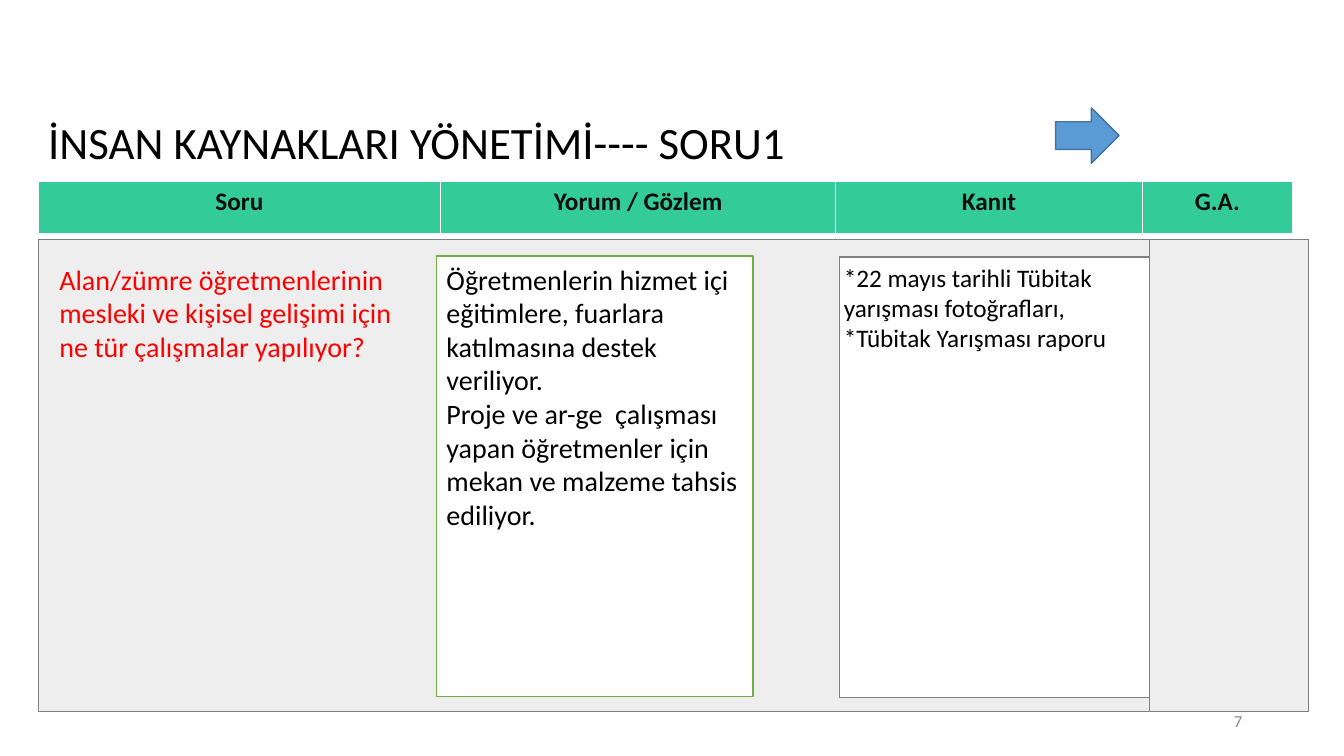
from lxml.etree import SubElement
from pptx import Presentation
from pptx.dml.color import RGBColor
from pptx.enum.shapes import MSO_SHAPE as Shape
from pptx.enum.text import MSO_ANCHOR as Anchor, PP_ALIGN as Align
from pptx.oxml.ns import qn
from pptx.util import Inches, Pt

GRAY_LINE = ("808080", 0.75)
GREEN_LINE = ("70AD47", 1)
BLUE_LINE = ("43739E", 1)
HEADINGS = {"Soru": 3.99, "Yorum / Gözlem": 3.92, "Kanıt": 3.04, "G.A.": 1.49}
BORDERS = {"a:lnL": 1, "a:lnR": 1, "a:lnT": 1, "a:lnB": 3}
QUESTION = ["Alan/zümre öğretmenlerinin mesleki ve kişisel gelişimi için "
            "ne tür çalışmalar yapılıyor?"]
OBSERVATIONS = [
    "Öğretmenlerin hizmet içi eğitimlere, fuarlara katılmasına destek veriliyor.",
    "Proje ve ar-ge  çalışması yapan öğretmenler için mekan ve malzeme tahsis ediliyor.",
]
EVIDENCE = ["*22 mayıs tarihli Tübitak yarışması fotoğrafları,",
            "*Tübitak Yarışması raporu"]


def color(value):
    """Turn a hex string into a colour."""
    return RGBColor.from_string(value)


def write(frame, lines, ink, size, align=Align.LEFT, bold=False, spacing=1.0):
    """Fill a text frame with one paragraph per line."""
    for index, line in enumerate(lines):
        paragraph = frame.paragraphs[0] if index == 0 else frame.add_paragraph()
        paragraph.text = line
        paragraph.alignment = align
        paragraph.line_spacing = spacing
        font = paragraph.runs[0].font
        for name, value in {"name": "Calibri", "size": Pt(size), "bold": bold}.items():
            setattr(font, name, value)
        font.color.rgb = color(ink)


def add_text(slide, box, lines, ink, size, anchor=Anchor.TOP, **style):
    """Place wrapped text in a box."""
    frame = slide.shapes.add_textbox(*map(Inches, box)).text_frame
    frame.word_wrap = True
    frame.vertical_anchor = anchor
    write(frame, lines, ink, size, **style)


def add_panel(slide, box, fill, outline=None, kind=Shape.RECTANGLE):
    """Place a flat filled shape with an optional outline."""
    panel = slide.shapes.add_shape(kind, *map(Inches, box))
    panel.shadow.inherit = False
    panel.fill.solid()
    panel.fill.fore_color.rgb = color(fill)
    if outline:
        panel.line.color.rgb = color(outline[0])
        panel.line.width = Pt(outline[1])
    else:
        panel.line.fill.background()


def add_borders(cell):
    """Draw white borders around a table cell."""
    properties = cell._tc.get_or_add_tcPr()
    for position, (tag, width) in enumerate(BORDERS.items()):
        border = SubElement(properties, qn(tag), w=str(Pt(width)))
        fill = SubElement(border, qn("a:solidFill"))
        SubElement(fill, qn("a:srgbClr"), val="FFFFFF")
        properties.insert(position, border)


def add_headings(slide, box):
    """Place the one-row table of column headings."""
    table = slide.shapes.add_table(1, len(HEADINGS), *map(Inches, box)).table
    for index, (heading, width) in enumerate(HEADINGS.items()):
        table.columns[index].width = Inches(width)
        cell = table.cell(0, index)
        cell.fill.solid()
        cell.fill.fore_color.rgb = color("33CC99")
        write(cell.text_frame, [heading], "0D0D0D", 18, align=Align.CENTER, bold=True)
        add_borders(cell)


def add_header(slide, left, top):
    """Place the title, the arrow and the headings."""
    add_text(slide, (left, top, 9.93, 0.57), ["İNSAN KAYNAKLARI YÖNETİMİ---- SORU1"],
             "000000", 32, anchor=Anchor.MIDDLE, spacing=0.9)
    add_panel(slide, (left + 10.09, top - 0.08, 0.63, 0.55), "5B9BD5", BLUE_LINE,
              Shape.RIGHT_ARROW)
    add_headings(slide, (left, top + 0.65, 12.44, 0.53))


def add_answers(slide, left, top, width, height):
    """Place the question, observation, evidence and score columns."""
    text_top = top + 0.17
    score_width = 1.58
    add_panel(slide, (left, top, width, height), "EEEEEE", GRAY_LINE)
    add_panel(slide, (left + 3.95, top + 0.16, 3.14, 4.37), "FFFFFF", GREEN_LINE)
    add_panel(slide, (left + 7.95, text_top, 3.07, 4.37), "FFFFFF", GRAY_LINE)
    add_panel(slide, (left + width - score_width, top, score_width, height),
              "EEEEEE", GRAY_LINE)
    add_text(slide, (left + 0.11, text_top, 3.64, 1.11), QUESTION, "FF0000", 20)
    add_text(slide, (left + 3.95, text_top, 3.14, 2.79), OBSERVATIONS, "000000", 20)
    add_text(slide, (left + 7.89, text_top, 3.18, 1.01), EVIDENCE, "000000", 18)


def main():
    """Build and save the slide."""
    deck = Presentation()
    deck.slide_width, deck.slide_height = Inches(13.33), Inches(7.5)
    slide = deck.slides.add_slide(deck.slide_layouts[6])
    add_header(slide, 0.38, 1.15)
    add_answers(slide, 0.38, 2.38, 12.6, 4.68)
    add_text(slide, (9.42, 6.95, 3, 0.4), ["7"], "8C8C8C", 12,
             anchor=Anchor.MIDDLE, align=Align.RIGHT)
    deck.save("out.pptx")


if __name__ == "__main__":
    main()
